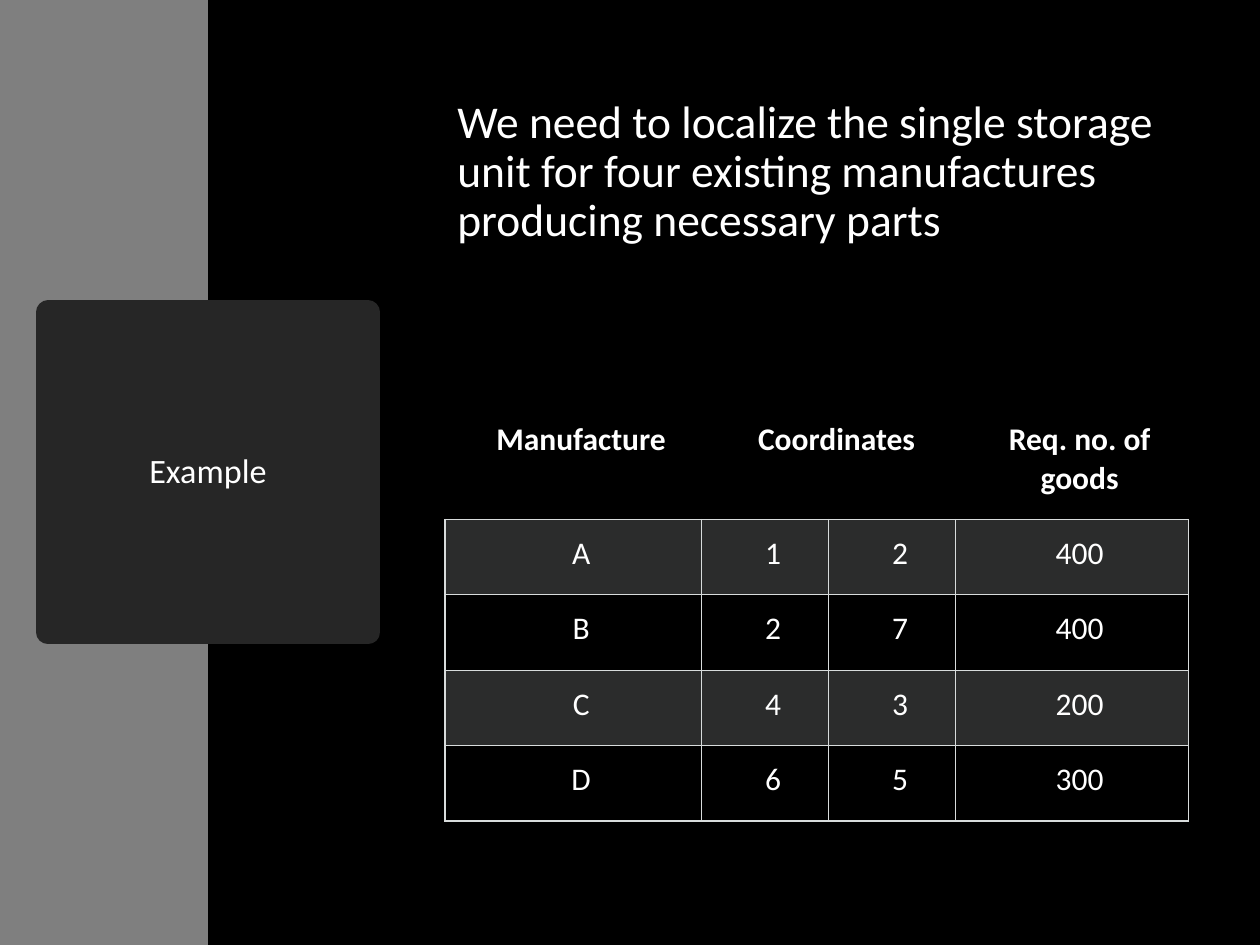
from lxml import etree
from pptx import Presentation
from pptx.dml.color import RGBColor
from pptx.enum import shapes, text
from pptx.oxml import ns
from pptx.util import Cm, Pt

FONT = "Calibri"
COLORS = {
    "background": "000000",
    "band": "7F7F7F",
    "badge": "262626",
    "text": "FFFFFF",
    "border": "D8DCDC",
    "stripe": "D8DEDC",
}
TITLE = "Example"
BODY = ("We need to localize the single storage unit for four existing "
        "manufactures producing necessary parts")
ROWS = [
    ("Manufacture", "Coordinates", "", "Req. no. of goods"),
    ("A", "1", "2", "400"),
    ("B", "2", "7", "400"),
    ("C", "4", "3", "200"),
    ("D", "6", "5", "300"),
]
COL_WIDTHS = (5.18, 2.56, 2.56, 4.68)
HEADER_HEIGHT, ROW_HEIGHT = 2.29, 1.52
CONTENT_LEFT, CONTENT_WIDTH = 8.97, sum(COL_WIDTHS)


def rgb(name):
    return RGBColor.from_string(COLORS[name])


def sub(parent, tag, **attrs):
    return etree.SubElement(parent, ns.qn(tag), **attrs)


def write(tf, words, size, align, bold=False):
    tf.word_wrap = True
    p = tf.paragraphs[0]
    p.text = words
    p.alignment = align
    p.font.name, p.font.size, p.font.bold = FONT, Pt(size), bold
    p.font.color.rgb = rgb("text")
    return p


def add_rect(slide, box, color):
    sp = slide.shapes.add_shape(shapes.MSO_SHAPE.RECTANGLE, *map(Cm, box))
    sp.shadow.inherit = False
    sp.fill.solid()
    sp.fill.fore_color.rgb = rgb(color)
    sp.line.fill.background()
    return sp


def set_borders(cell, visible):
    """Draw the sides named in visible and clear the others."""
    tcPr = cell._tc.get_or_add_tcPr()
    for i, side in enumerate("LRTB"):
        ln = etree.Element(ns.qn(f"a:ln{side}"), w=str(Pt(0.75)))
        if side in visible:
            sub(sub(ln, "a:solidFill"), "a:srgbClr", val=COLORS["border"])
        else:
            sub(ln, "a:noFill")
        tcPr.insert(i, ln)


def add_title(slide):
    sp = add_rect(slide, (0.97, 6.3, 6.45, 6.45), "badge")
    sp.line.color.rgb = rgb("badge")
    sp.line.width = Pt(13.75)
    sub(sp.line._get_or_add_ln(), "a:round")
    tf = sp.text_frame
    tf.vertical_anchor = text.MSO_ANCHOR.MIDDLE
    write(tf, TITLE, 19.5, text.PP_ALIGN.CENTER).line_spacing = 0.9


def add_body(slide):
    box = (CONTENT_LEFT, 1.88, CONTENT_WIDTH, 4.42)
    tf = slide.shapes.add_textbox(*map(Cm, box)).text_frame
    p = write(tf, BODY, 26, text.PP_ALIGN.LEFT)
    p.line_spacing = 0.9
    p.space_before = Pt(10)


def add_data_table(slide):
    heights = [HEADER_HEIGHT] + [ROW_HEIGHT] * (len(ROWS) - 1)
    box = (CONTENT_LEFT, 8.18, CONTENT_WIDTH, sum(heights))
    table = slide.shapes.add_table(
        len(ROWS), len(COL_WIDTHS), *map(Cm, box)).table
    table.first_row = table.horz_banding = False
    for col, width in zip(table.columns, COL_WIDTHS):
        col.width = Cm(width)
    for row, height in zip(table.rows, heights):
        row.height = Cm(height)
    table.cell(0, 1).merge(table.cell(0, 2))

    for r, values in enumerate(ROWS):
        header = r == 0
        for c, value in enumerate(values):
            cell = table.cell(r, c)
            cell.margin_left = Cm(0.61)
            cell.margin_right = cell.margin_top = cell.margin_bottom = Cm(0.3)
            if value:
                write(cell.text_frame, value, 18, text.PP_ALIGN.CENTER, header)
            if r % 2:
                cell.fill.solid()
                cell.fill.fore_color.rgb = rgb("stripe")
                color = cell._tc.tcPr.find(".//" + ns.qn("a:srgbClr"))
                sub(color, "a:alpha", val="20000")
            else:
                cell.fill.background()
            set_borders(cell, "B" if header else "LRTB")


def main():
    prs = Presentation()
    prs.slide_width, prs.slide_height = Cm(25.4), Cm(19.05)
    slide = prs.slides.add_slide(prs.slide_layouts[6])
    slide.background.fill.solid()
    slide.background.fill.fore_color.rgb = rgb("background")
    add_rect(slide, (0, 0, 4.19, 19.05), "band")
    add_title(slide)
    add_body(slide)
    add_data_table(slide)
    prs.save("out.pptx")


if __name__ == "__main__":
    main()
